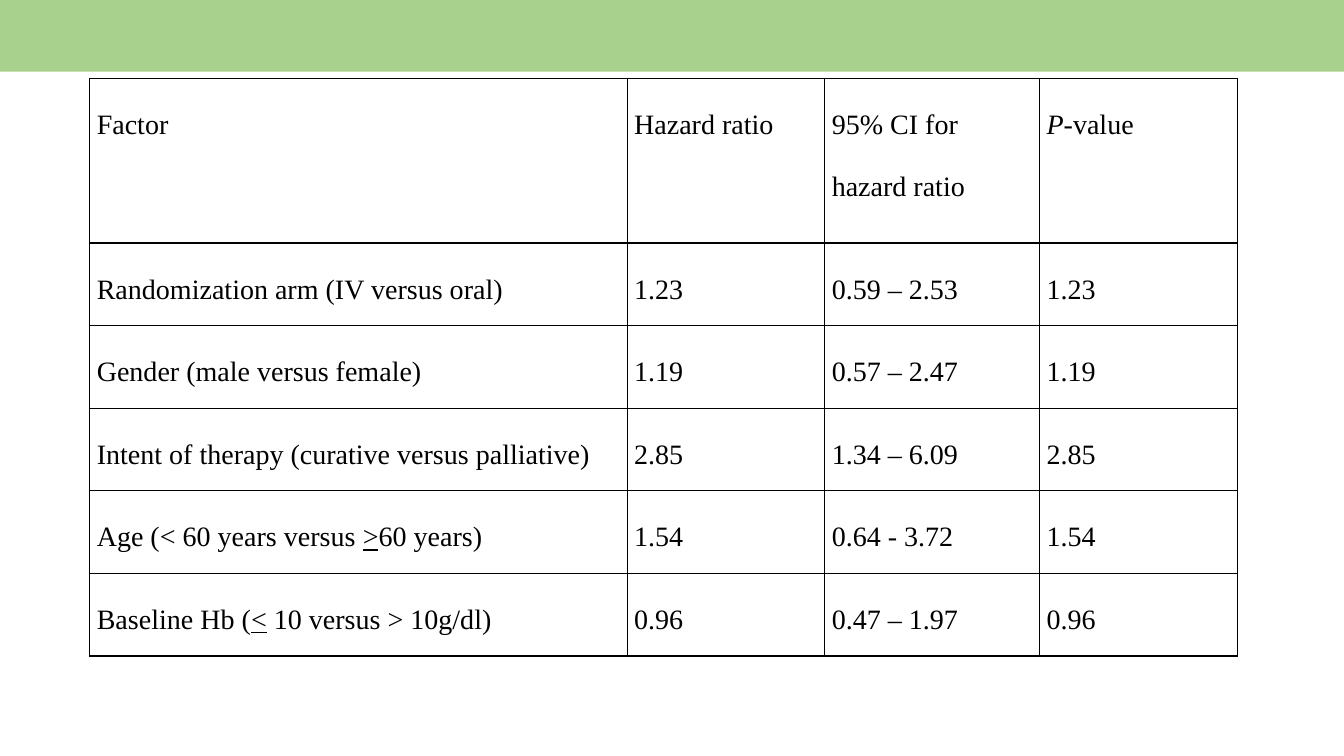
"""Build a slide with a table of hazard ratios by factor."""
from dataclasses import dataclass

from lxml import etree
from pptx import Presentation
from pptx import util as u
from pptx.dml.color import RGBColor
from pptx.enum import shapes
from pptx.oxml import ns
from pptx.slide import Slide
from pptx.table import _Cell as Cell


@dataclass(frozen=True)
class Theme:
    """Colours, font and sizes of the slide."""
    band: str = "A9D18E"
    ink: str = "000000"
    font: str = "Times New Roman"
    size: int = 20
    line: int = 1
    pad: float = 0.07


@dataclass(frozen=True)
class Part:
    """A stretch of text with its emphasis."""
    text: str
    slant: bool = False
    under: bool = False


@dataclass(frozen=True)
class Factor:
    """A factor with its hazard ratio and interval."""
    name: list[Part]
    ratio: str
    range: str

    def cells(self) -> list[list[Part]]:
        """Return the row, whose last column repeats the ratio."""
        return [self.name, [Part(self.ratio)], [Part(self.range)], [Part(self.ratio)]]


THEME = Theme()
WIDTHS = [5.33, 1.96, 2.13, 1.96]
HEAD, ROW = 1.63, 0.82
TITLES = [
    [Part("Factor")],
    [Part("Hazard ratio")],
    [Part("95% CI for hazard ratio")],
    [Part("P", slant=True), Part("-value")],
]
FACTORS = [
    Factor([Part("Randomization arm (IV versus oral)")], "1.23", "0.59 – 2.53"),
    Factor([Part("Gender (male versus female)")], "1.19", "0.57 – 2.47"),
    Factor([Part("Intent of therapy (curative versus palliative)")], "2.85", "1.34 – 6.09"),
    Factor([Part("Age (< 60 years versus "), Part(">", under=True), Part("60 years)")],
           "1.54", "0.64 - 3.72"),
    Factor([Part("Baseline Hb ("), Part("<", under=True), Part(" 10 versus > 10g/dl)")],
           "0.96", "0.47 – 1.97"),
]


def add_band(slide: Slide, width: int) -> None:
    """Draw the coloured band along the top."""
    band = slide.shapes.add_shape(shapes.MSO_SHAPE.RECTANGLE, 0, 0, width, u.Inches(0.71))
    band.shadow.inherit = False
    band.fill.solid()
    band.fill.fore_color.rgb = RGBColor.from_string(THEME.band)
    band.line.fill.background()


def add_edges(cell: Cell) -> None:
    """Draw a thin line on all four sides of a cell."""
    props = cell._tc.get_or_add_tcPr()
    for side in ("L", "R", "T", "B"):
        edge = etree.SubElement(props, ns.qn(f"a:ln{side}"), w=str(u.Pt(THEME.line)))
        fill = etree.SubElement(edge, ns.qn("a:solidFill"))
        etree.SubElement(fill, ns.qn("a:srgbClr"), val=THEME.ink)


def fill_cell(cell: Cell, parts: list[Part]) -> None:
    """Write and style the text of a cell."""
    cell.margin_left = cell.margin_right = u.Inches(THEME.pad)
    cell.margin_top = cell.margin_bottom = 0
    add_edges(cell)
    cell.fill.background()
    para = cell.text_frame.paragraphs[0]
    para.line_spacing = 2.0
    for part in parts:
        run = para.add_run()
        run.text = part.text
        font = run.font
        font.name, font.size = THEME.font, u.Pt(THEME.size)
        font.color.rgb = RGBColor.from_string(THEME.ink)
        font.italic, font.underline = part.slant, part.under


def add_grid(slide: Slide) -> None:
    """Add the table of factors."""
    rows = [TITLES] + [factor.cells() for factor in FACTORS]
    heights = [HEAD] + [ROW] * len(FACTORS)
    frame = slide.shapes.add_table(
        len(rows), len(WIDTHS), u.Inches(0.89), u.Inches(0.78),
        u.Inches(sum(WIDTHS)), u.Inches(sum(heights)))
    table = frame.table
    table.first_row = table.horz_banding = False
    for column, width in zip(table.columns, WIDTHS):
        column.width = u.Inches(width)
    for line, height, row in zip(table.rows, heights, rows):
        line.height = u.Inches(height)
        for cell, parts in zip(line.cells, row):
            fill_cell(cell, parts)


def main() -> None:
    """Build and save the slide."""
    deck = Presentation()
    deck.slide_width, deck.slide_height = u.Inches(13.33), u.Inches(7.5)
    slide = deck.slides.add_slide(deck.slide_layouts[6])
    add_band(slide, deck.slide_width)
    add_grid(slide)
    deck.save("out.pptx")


if __name__ == "__main__":
    main()
